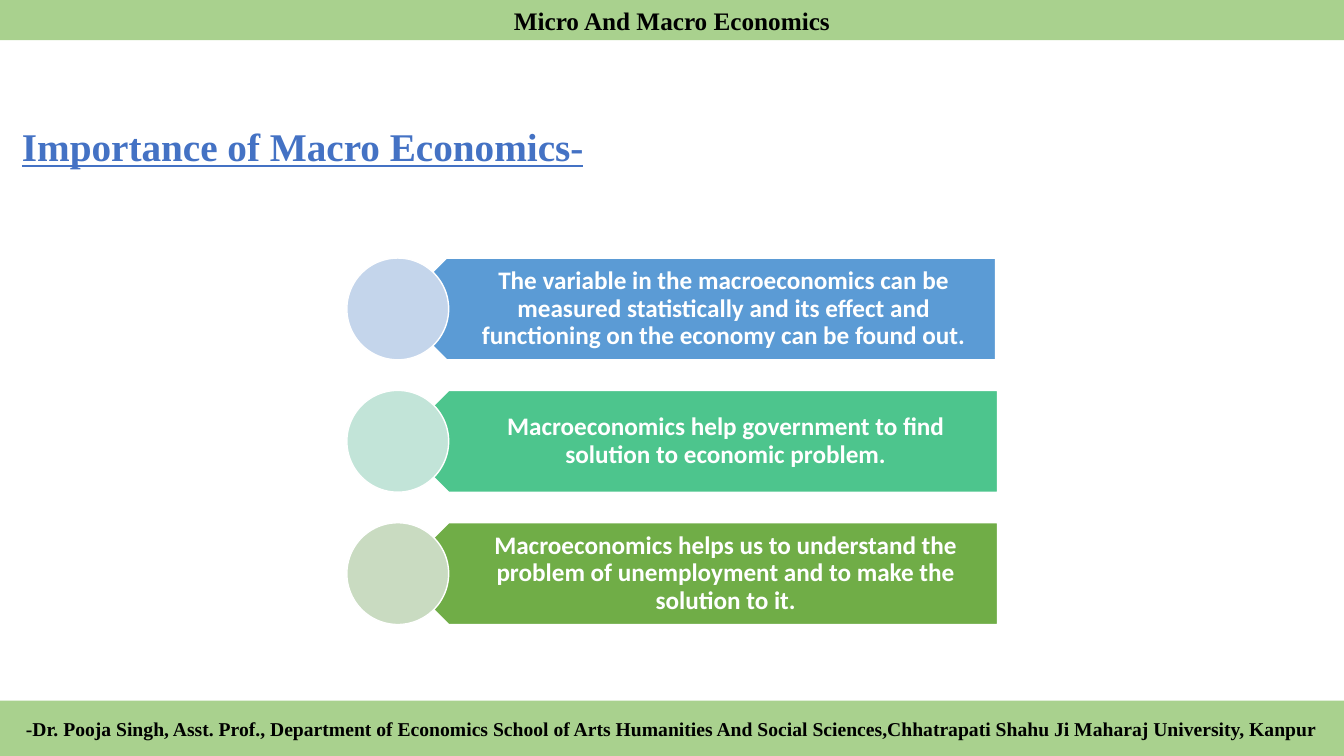
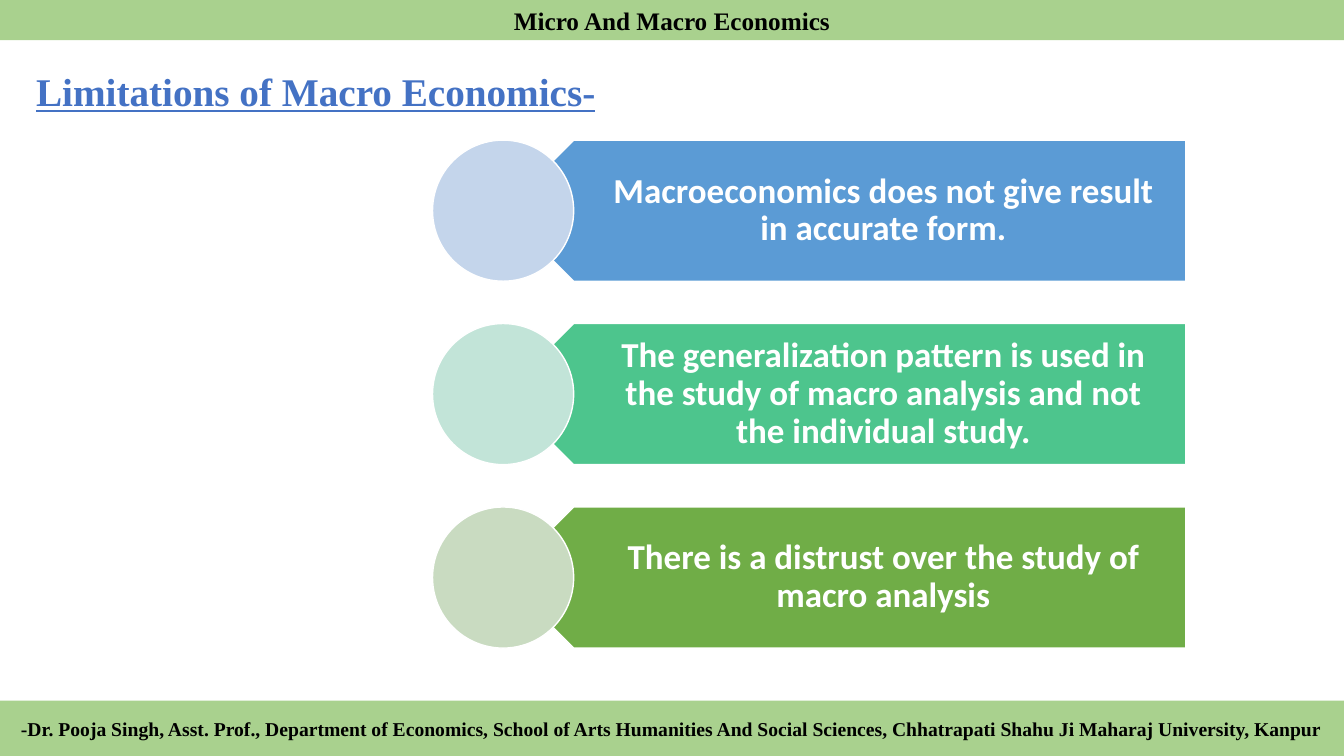
import pptx
import pptx.dml.color
import pptx.enum.shapes
import pptx.enum.text
import pptx.util

Inches = pptx.util.Inches
SHAPE = pptx.enum.shapes.MSO_SHAPE
ALIGN = pptx.enum.text.PP_ALIGN
ANCHOR = pptx.enum.text.MSO_ANCHOR

COLORS = {
    "band": "A9D18E",
    "title": "4472C4",
    "black": "000000",
    "white": "FFFFFF",
}
ROW_COLORS = [("5B9BD5", "C4D5EB"), ("4DC58D", "C2E4D8"), ("70AD47", "C9DBC1")]
SERIF = "Times New Roman"
SANS = "Calibri"
SLIDE_W, SLIDE_H = 13.33, 7.5
HEADER_H, FOOTER_H = 0.4, 0.55
HEADER = "Micro And Macro Economics"


def rgb(value):
    return pptx.dml.color.RGBColor.from_string(value)


def add_shape(s, kind, box, fill, line=None):
    sp = s.shapes.add_shape(kind, *map(Inches, box))
    sp.shadow.inherit = False
    sp.fill.solid()
    sp.fill.fore_color.rgb = rgb(fill)
    if line:
        sp.line.color.rgb = rgb(line)
        sp.line.width = pptx.util.Pt(1)
    else:
        sp.line.fill.background()
    return sp


def set_text(sp, text, size, font, color, align=ALIGN.CENTER, anchor=ANCHOR.MIDDLE):
    """Write one bold paragraph into a shape and return it."""
    tf = sp.text_frame
    tf.word_wrap = True
    tf.vertical_anchor = anchor
    p = tf.paragraphs[0]
    p.text = text
    p.alignment = align
    p.font.size = pptx.util.Pt(size)
    p.font.name = font
    p.font.bold = True
    p.font.color.rgb = rgb(color)
    return p


def add_band(s, top, height, text, size, anchor):
    sp = add_shape(s, SHAPE.RECTANGLE, (0, top, SLIDE_W, height), COLORS["band"])
    set_text(sp, text, size, SERIF, COLORS["black"], anchor=anchor)


def add_title(s, text, box):
    sp = s.shapes.add_textbox(*map(Inches, box))
    p = set_text(sp, text, 28, SERIF, COLORS["title"], ALIGN.LEFT)
    p.line_spacing = 0.9
    p.font.underline = True


def add_row(s, text, colors, left, top, size, plate_w, font_size, shift=0):
    """Arrow plate pointing left behind a circle; size is the row height."""
    plate_color, circle_color = colors
    plate_left = left + size / 2 + shift
    plate = add_shape(s, SHAPE.PENTAGON, (plate_left, top, plate_w, size),
                      plate_color, COLORS["white"])
    plate.rotation = 180

    inset = size / 4
    label = s.shapes.add_textbox(*map(Inches, (plate_left + inset, top,
                                               plate_w - inset, size)))
    p = set_text(label, text, font_size, SANS, COLORS["white"])
    p.line_spacing = 0.9
    tf = label.text_frame
    tf.margin_left = Inches(0.44 * size)
    tf.margin_right = Inches(0.14 * size)
    tf.margin_top = tf.margin_bottom = Inches(0.07 * size)

    add_shape(s, SHAPE.OVAL, (left, top, size, size), circle_color, COLORS["white"])


def add_list(s, items, left, top, size, plate_w, font_size, first_shift=0):
    for i, (text, colors) in enumerate(zip(items, ROW_COLORS)):
        add_row(s, text, colors, left, top + 1.3 * size * i, size, plate_w,
                font_size, 0 if i else first_shift)


def add_slide(prs, title, title_box, footer, items, **layout):
    s = prs.slides.add_slide(prs.slide_layouts[6])
    add_title(s, title, title_box)
    add_list(s, items, **layout)
    add_band(s, SLIDE_H - FOOTER_H, FOOTER_H, footer, 14, ANCHOR.MIDDLE)
    add_band(s, 0, HEADER_H, HEADER, 18, ANCHOR.TOP)


def main():
    prs = pptx.Presentation()
    prs.slide_width, prs.slide_height = Inches(SLIDE_W), Inches(SLIDE_H)

    add_slide(
        prs, "Importance of Macro Economics-", (0.12, 1.16, 10.27, 0.64),
        "-Dr. Pooja Singh, Asst. Prof., Department of Economics School of Arts "
        "Humanities And Social Sciences,Chhatrapati Shahu Ji Maharaj University, Kanpur",
        ["The variable in the macroeconomics can be measured statistically and its "
         "effect and functioning on the economy can be found out.",
         "Macroeconomics help government to find solution to economic problem.",
         "Macroeconomics helps us to understand the problem of unemployment and to "
         "make the solution to it."],
        left=3.44, top=2.56, size=1.01, plate_w=5.95, font_size=18, first_shift=-0.02)

    add_slide(
        prs, "Limitations of Macro Economics-", (0.26, 0.62, 6.06, 0.62),
        "-Dr. Pooja Singh, Asst. Prof., Department of Economics, School of Arts "
        "Humanities And Social Sciences, Chhatrapati Shahu Ji Maharaj University, Kanpur",
        ["Macroeconomics does not give result in accurate form.",
         "The generalization pattern is used in the study of macro analysis and not "
         "the individual study.",
         "There is a distrust over the study of macro analysis"],
        left=4.29, top=1.39, size=1.4, plate_w=6.77, font_size=25)

    prs.save("out.pptx")


if __name__ == "__main__":
    main()
